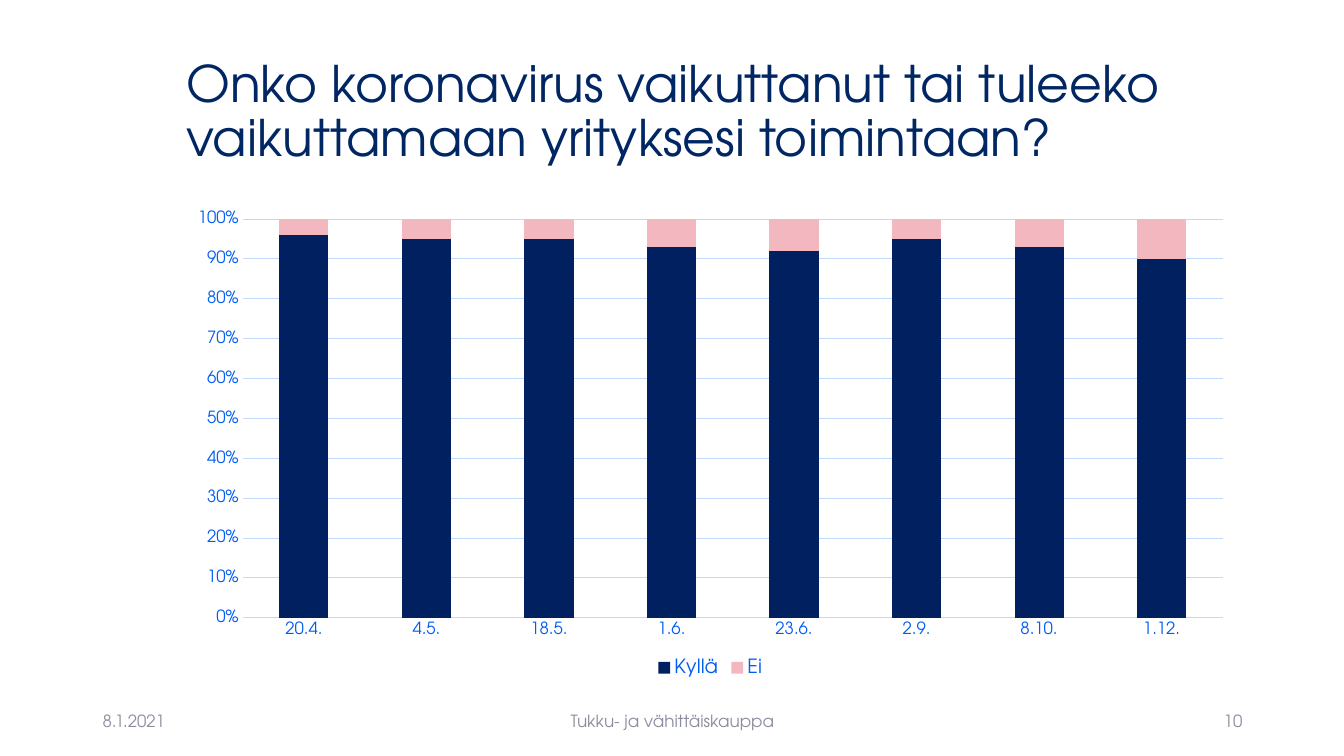
from dataclasses import dataclass

from pptx import Presentation
from pptx.chart.data import CategoryChartData
from pptx.dml.color import RGBColor
from pptx.enum.chart import XL_CHART_TYPE, XL_LEGEND_POSITION, XL_TICK_MARK
from pptx.enum.text import MSO_ANCHOR, PP_ALIGN
from pptx.slide import Slide
from pptx.util import Inches, Pt

FONT = "TeX Gyre Adventor"
COLORS = {
    "title": "002663",
    "footer": "8C8E9F",
    "label": "005DF3",
    "grid": "C1D9FF",
    "yes": "002060",
    "no": "F2B7BF",
}
DATES = ["20.4.", "4.5.", "18.5.", "1.6.", "23.6.", "2.9.", "8.10.", "1.12."]


@dataclass
class Label:
    text: str
    left: float
    top: float
    width: float
    height: float
    size: int = 12
    color: str = "footer"
    align: PP_ALIGN = PP_ALIGN.LEFT
    line_spacing: float = 1.0


@dataclass
class Answer:
    name: str
    values: list[int]
    color: str


LABELS = [
    Label("Onko koronavirus vaikuttanut tai tuleeko vaikuttamaan yrityksesi toimintaan?",
          1.75, 0.4, 10.59, 1.45, size=36, color="title", line_spacing=0.9),
    Label("8.1.2021", 0.92, 6.95, 3, 0.4),
    Label("Tukku- ja vähittäiskauppa", 4.42, 6.95, 4.5, 0.4, align=PP_ALIGN.CENTER),
    Label("10", 9.42, 6.95, 3, 0.4, align=PP_ALIGN.RIGHT),
]
ANSWERS = [
    Answer("Kyllä", [96, 95, 95, 93, 92, 95, 93, 90], "yes"),
    Answer("Ei", [4, 5, 5, 7, 8, 5, 7, 10], "no"),
]


def rgb(name: str) -> RGBColor:
    return RGBColor.from_string(COLORS[name])


def style_font(font, size: int, color: str) -> None:
    font.name = FONT
    font.size = Pt(size)
    font.color.rgb = rgb(color)


def add_label(slide: Slide, label: Label) -> None:
    shape = slide.shapes.add_textbox(Inches(label.left), Inches(label.top),
                                     Inches(label.width), Inches(label.height))
    text_frame = shape.text_frame
    text_frame.word_wrap = True
    text_frame.vertical_anchor = MSO_ANCHOR.MIDDLE
    text_frame.text = label.text
    paragraph = text_frame.paragraphs[0]
    paragraph.alignment = label.align
    paragraph.line_spacing = label.line_spacing
    style_font(paragraph.runs[0].font, label.size, label.color)


def style_line(line) -> None:
    line.color.rgb = rgb("grid")
    line.width = Pt(0.75)


def add_answer_chart(slide: Slide) -> None:
    data = CategoryChartData()
    data.categories = DATES
    for answer in ANSWERS:
        data.add_series(answer.name, answer.values)
    chart = slide.shapes.add_chart(XL_CHART_TYPE.COLUMN_STACKED_100, Inches(1.75), Inches(2),
                                   Inches(10.59), Inches(4.76), data).chart
    style_font(chart.font, 10, "title")
    chart.has_title = False

    chart.has_legend = True
    chart.legend.position = XL_LEGEND_POSITION.BOTTOM
    chart.legend.include_in_layout = False
    style_font(chart.legend.font, 14, "label")

    plot = chart.plots[0]
    plot.vary_by_categories = False
    plot.gap_width = 150
    plot.overlap = 100
    for series, answer in zip(plot.series, ANSWERS):
        series.format.fill.solid()
        series.format.fill.fore_color.rgb = rgb(answer.color)

    for axis in (chart.category_axis, chart.value_axis):
        axis.major_tick_mark = axis.minor_tick_mark = XL_TICK_MARK.NONE
        style_font(axis.tick_labels.font, 12, "label")
    style_line(chart.category_axis.format.line)

    value_axis = chart.value_axis
    value_axis.minimum_scale = 0
    value_axis.maximum_scale = 1
    value_axis.major_unit = 0.1
    value_axis.format.line.fill.background()
    value_axis.has_major_gridlines = True
    style_line(value_axis.major_gridlines.format.line)
    value_axis.tick_labels.number_format = "0%"
    value_axis.tick_labels.number_format_is_linked = False


def main() -> None:
    presentation = Presentation()
    presentation.slide_width = Inches(13.33)
    presentation.slide_height = Inches(7.5)
    slide = presentation.slides.add_slide(presentation.slide_layouts[6])
    for label in LABELS:
        add_label(slide, label)
    add_answer_chart(slide)
    presentation.save("out.pptx")


if __name__ == "__main__":
    main()
